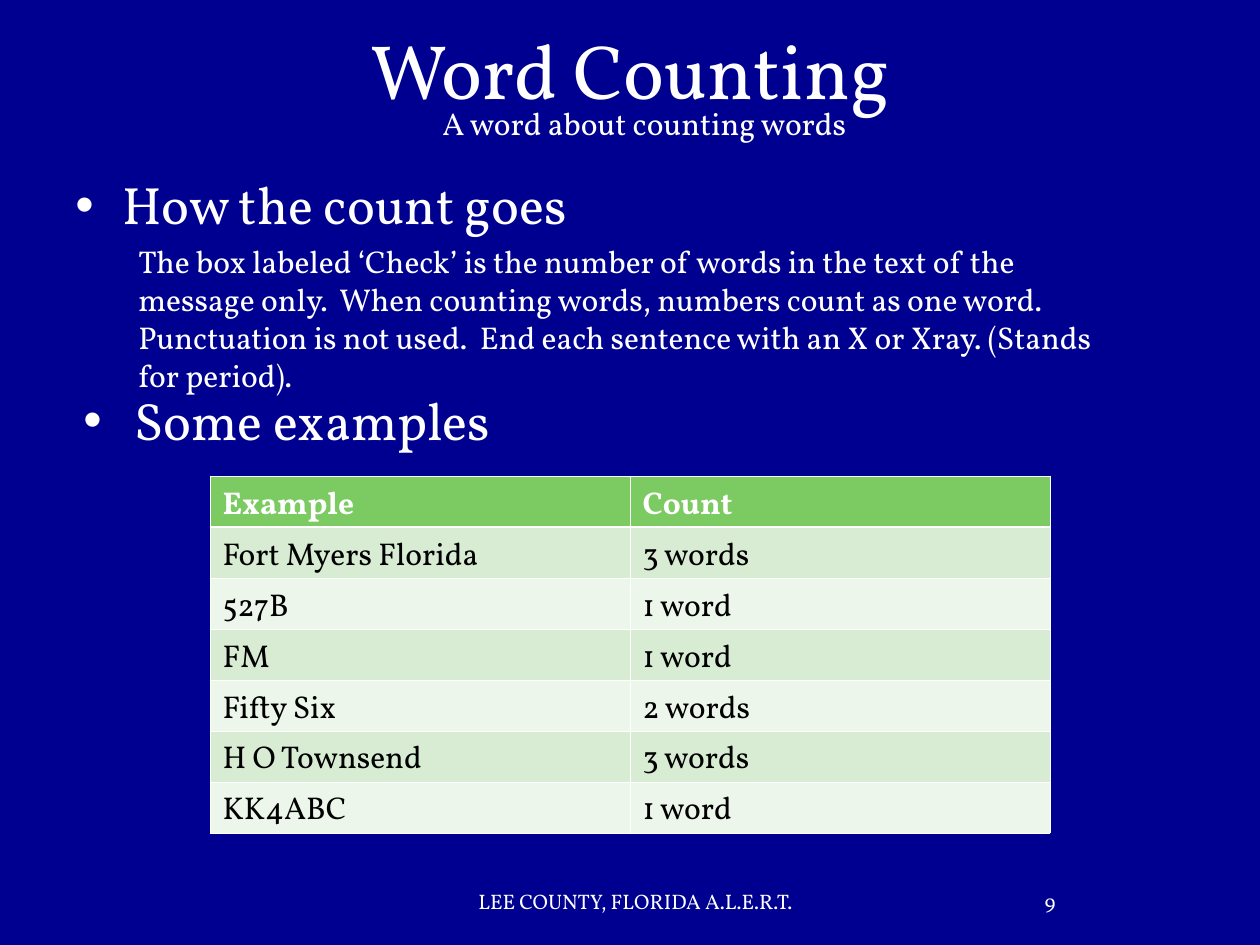
from lxml.etree import SubElement
from pptx import Presentation
from pptx.dml.color import RGBColor
from pptx.enum.text import MSO_ANCHOR, PP_ALIGN
from pptx.oxml.ns import qn
from pptx.util import Emu, Pt

FONT = "Vollkorn"
WHITE, BLACK, NAVY = "FFFFFF", "000000", "000090"
HEADER_GREEN, BAND_DARK, BAND_LIGHT = "7CCA62", "D7ECD3", "ECF6EA"
EXPLANATION = (
    "The box labeled ‘Check’ is the number of words in the text of the message only.  "
    "When counting words, numbers count as one word.  Punctuation is not used.  "
    "End each sentence with an X or Xray. (Stands for period)."
)
EXAMPLES = [
    ("Example", "Count"),
    ("Fort Myers Florida", "3 words"),
    ("527B", "1 word"),
    ("FM", "1 word"),
    ("Fifty Six", "2 words"),
    ("H O Townsend", "3 words"),
    ("KK4ABC", "1 word"),
]


def px(length):
    return Emu(round(length * 914400 / 126))


def color(hex_value):
    return RGBColor.from_string(hex_value)


def format_runs(paragraph, size, hex_value=WHITE, bold=False):
    for run in paragraph.runs:
        run.font.name = FONT
        run.font.size = Pt(size)
        run.font.bold = bold
        run.font.color.rgb = color(hex_value)


def add_text(slide, box, text, size, align=PP_ALIGN.LEFT,
             anchor=MSO_ANCHOR.TOP, wrap=True):
    shape = slide.shapes.add_textbox(*map(px, box))
    frame = shape.text_frame
    frame.word_wrap = wrap
    frame.vertical_anchor = anchor
    frame.text = text
    paragraph = frame.paragraphs[0]
    paragraph.alignment = align
    format_runs(paragraph, size)
    return paragraph


def add_bullet(paragraph, indent):
    properties = paragraph._p.get_or_add_pPr()
    properties.set("marL", str(px(indent)))
    properties.set("indent", str(-px(indent)))
    SubElement(properties, qn("a:buFont"), typeface="Arial")
    SubElement(properties, qn("a:buChar"), char="•")


def set_borders(cell, widths):
    properties = cell._tc.get_or_add_tcPr()
    for position, (side, width) in enumerate(widths.items()):
        line = properties.makeelement(qn(f"a:{side}"), {"w": str(Pt(width))})
        fill = SubElement(line, qn("a:solidFill"))
        SubElement(fill, qn("a:srgbClr"), val=WHITE)
        properties.insert(position, line)


def add_heading(slide, left, top, width):
    add_text(slide, (left, top, width, 158), "Word Counting", 44,
             PP_ALIGN.CENTER, MSO_ANCHOR.MIDDLE)
    add_text(slide, (left + 367, top + 108, 437, 52),
             "A word about counting words", 18, wrap=False)


def add_body(slide, left, top, width):
    count_heading = add_text(slide, (left, top, 683, 73), "How the count goes", 30)
    count_heading.line_spacing = 0.9
    count_heading.space_before = Pt(7.5)
    add_bullet(count_heading, 47)
    add_text(slide, (left + 63, top + 63, 987, 166), EXPLANATION, 18)
    examples_heading = add_text(slide, (left + 8, top + 209, width, 76),
                                "Some examples", 30)
    add_bullet(examples_heading, 51)


def add_examples_table(slide, left, top, width, row_height):
    row_count, column_count = len(EXAMPLES), len(EXAMPLES[0])
    frame = slide.shapes.add_table(row_count, column_count, px(left), px(top),
                                   px(width), px(row_height * row_count))
    table = frame.table
    for row_index, values in enumerate(EXAMPLES):
        table.rows[row_index].height = px(row_height)
        is_header = row_index == 0
        band = BAND_DARK if row_index % 2 else BAND_LIGHT
        for column_index, value in enumerate(values):
            cell = table.cell(row_index, column_index)
            cell.margin_top = px(8)
            cell.margin_bottom = px(6)
            cell.fill.solid()
            cell.fill.fore_color.rgb = color(HEADER_GREEN if is_header else band)
            cell.text_frame.text = value
            paragraph = cell.text_frame.paragraphs[0]
            paragraph.line_spacing = 0.95
            format_runs(paragraph, 18, WHITE if is_header else BLACK, is_header)
            set_borders(cell, {
                "lnL": 0.45,
                "lnR": 0.45,
                "lnT": 1.47 if row_index == 1 else 0.45,
                "lnB": 1.47 if is_header else 0.45,
            })


def add_footer(slide, left, top, height):
    parts = [("LEE COUNTY, FLORIDA A.L.E.R.T.", 0, 535), ("9", 535, 294)]
    for text, offset, width in parts:
        add_text(slide, (left + offset, top, width, height), text, 12,
                 PP_ALIGN.CENTER, MSO_ANCHOR.MIDDLE)


def main():
    presentation = Presentation()
    presentation.slide_width = px(1260)
    presentation.slide_height = px(945)
    slide = presentation.slides.add_slide(presentation.slide_layouts[6])
    slide.background.fill.solid()
    slide.background.fill.fore_color.rgb = color(NAVY)

    # Title and subtitle
    add_heading(slide, 63, -10, 1134)
    # Bulleted headings and explanation
    add_body(slide, 63, 173, 1063)
    # Word count examples
    add_examples_table(slide, 210, 476, 840, 51)
    # Organisation and slide number
    add_footer(slide, 368, 876, 50)

    presentation.save("out.pptx")


if __name__ == "__main__":
    main()
